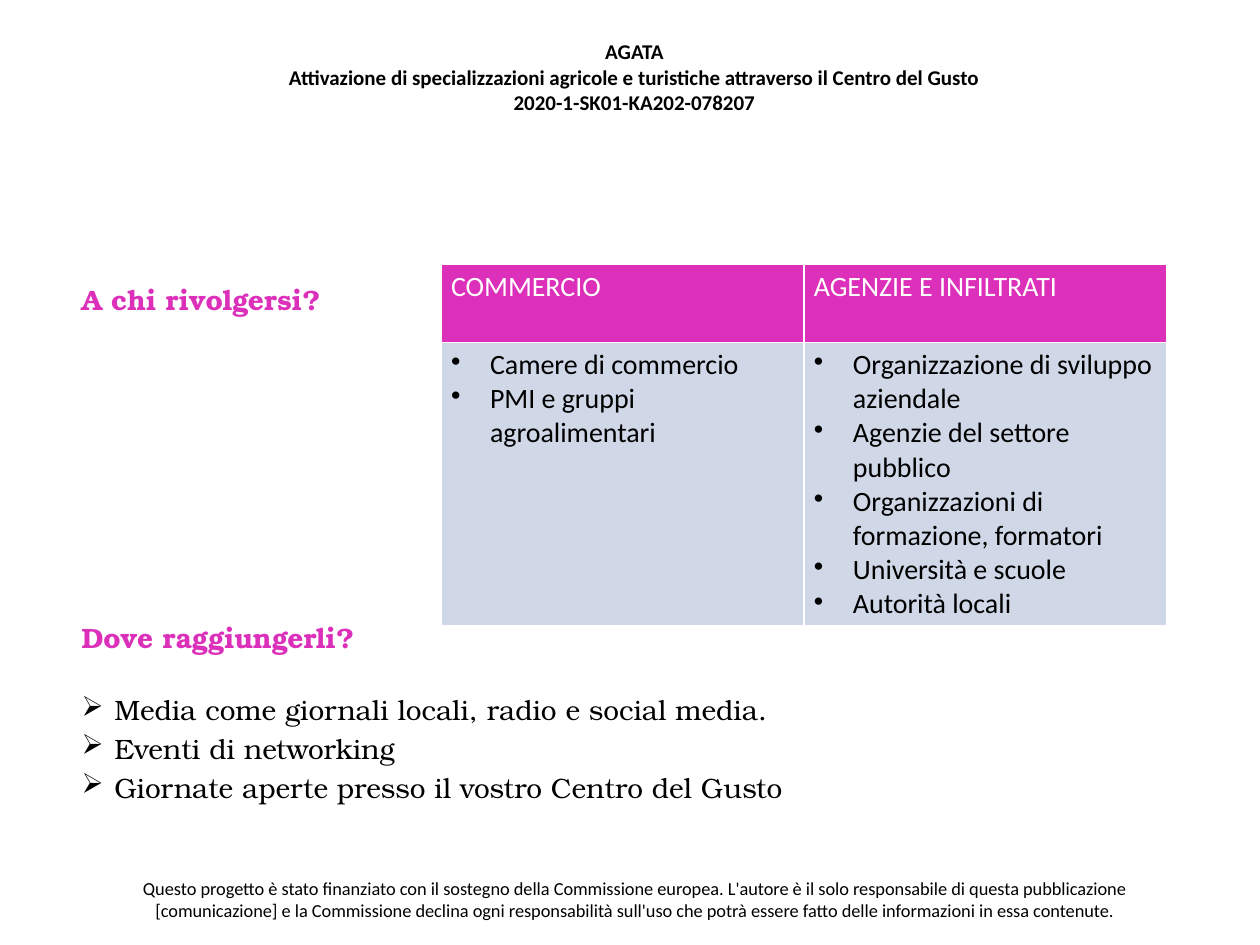
from dataclasses import dataclass

from lxml import etree
from pptx import Presentation
from pptx import util as u
from pptx.dml import color
from pptx.enum import text
from pptx.oxml import ns

WIDTH, HEIGHT = 10, 7.5


@dataclass(frozen=True)
class Theme:
    ink: str = "000000"
    accent: str = "DC30BB"
    paper: str = "FFFFFF"
    cell: str = "D0D8E8"
    sans: str = "Calibri"
    serif: str = "TeX Gyre Bonum"
    body: float = 16
    project: float = 12
    credit: float = 10.5


THEME = Theme()

PROJECT = [
    "AGATA",
    "Attivazione di specializzazioni agricole e turistiche attraverso il Centro del Gusto",
    "2020-1-SK01-KA202-078207",
]
CREDIT = (
    "Questo progetto è stato finanziato con il sostegno della Commissione europea. "
    "L'autore è il solo responsabile di questa pubblicazione [comunicazione] e la "
    "Commissione declina ogni responsabilità sull'uso che potrà essere fatto delle "
    "informazioni in essa contenute."
)
AUDIENCES = {
    "COMMERCIO": ["Camere di commercio", "PMI e gruppi agroalimentari"],
    "AGENZIE E INFILTRATI": [
        "Organizzazione di sviluppo aziendale",
        "Agenzie del settore pubblico",
        "Organizzazioni di formazione, formatori",
        "Università e scuole",
        "Autorità locali",
    ],
}
CHANNELS = [
    "Media come giornali locali, radio e social media.",
    "Eventi di networking",
    "Giornate aperte presso il vostro Centro del Gusto",
]


def add_frame(slide, left, top, width, height):
    frame = slide.shapes.add_textbox(
        *(u.Inches(length) for length in (left, top, width, height))
    ).text_frame
    frame.word_wrap = True
    return frame


def next_paragraph(frame):
    first = frame.paragraphs[0]
    return frame.add_paragraph() if first.runs else first


def add_line(frame, words, size, face, ink, bold=False, align=None, bullet=None, indent=0):
    line = next_paragraph(frame)
    if bullet:
        props = line._p.get_or_add_pPr()
        props.set("marL", str(u.Inches(indent)))
        props.set("indent", str(-u.Inches(indent)))
        etree.SubElement(props, ns.qn("a:buChar")).set("char", bullet)
    line.alignment = align
    run = line.add_run()
    run.text = words
    run.font.size = u.Pt(size)
    run.font.name = face
    run.font.bold = bold
    run.font.color.rgb = color.RGBColor.from_string(ink)
    return line


def add_heading(frame, words):
    add_line(frame, words, THEME.body, THEME.serif, THEME.accent, bold=True)


def style_cell(cell, fill):
    cell.fill.solid()
    cell.fill.fore_color.rgb = color.RGBColor.from_string(fill)
    cell.margin_left = cell.margin_right = u.Inches(0.08)
    cell.margin_top = cell.margin_bottom = u.Inches(0.04)
    props = cell._tc.get_or_add_tcPr()
    for place, side in enumerate(("lnL", "lnR", "lnT", "lnB")):
        border = etree.Element(ns.qn(f"a:{side}"), w=str(u.Pt(1)))
        solid = etree.SubElement(border, ns.qn("a:solidFill"))
        etree.SubElement(solid, ns.qn("a:srgbClr")).set("val", THEME.paper)
        props.insert(place, border)


def add_audiences(slide, left, top, column_width, row_heights):
    table = slide.shapes.add_table(
        len(row_heights), len(AUDIENCES), u.Inches(left), u.Inches(top),
        u.Inches(column_width * len(AUDIENCES)), u.Inches(sum(row_heights)),
    ).table
    for row, height in zip(table.rows, row_heights):
        row.height = u.Inches(height)
    for column, (audience, members) in enumerate(AUDIENCES.items()):
        table.columns[column].width = u.Inches(column_width)
        head, detail = table.cell(0, column), table.cell(1, column)
        style_cell(head, THEME.accent)
        style_cell(detail, THEME.cell)
        add_line(head.text_frame, audience, THEME.body, THEME.sans, THEME.paper)
        for member in members:
            add_line(detail.text_frame, member, THEME.body, THEME.sans, THEME.ink,
                     bullet="•", indent=0.31)


def add_channels(frame):
    for place, channel in enumerate(CHANNELS):
        line = add_line(frame, channel, THEME.body, THEME.serif, THEME.ink,
                        bullet="➢", indent=0.26)
        line.line_spacing = 1.15
        if place == 0:
            line.space_before = u.Pt(19)


def main():
    deck = Presentation()
    deck.slide_width, deck.slide_height = u.Inches(WIDTH), u.Inches(HEIGHT)
    slide = deck.slides.add_slide(deck.slide_layouts[6])
    margin = 0.055 * WIDTH
    center = text.PP_ALIGN.CENTER

    project = add_frame(slide, 2.08, 0.26, 5.91, 0.71)
    for words in PROJECT:
        add_line(project, words, THEME.project, THEME.sans, THEME.ink, bold=True, align=center)

    credit = add_frame(slide, 0.54, 6.91, 0.9 * WIDTH, 0.47)
    add_line(credit, CREDIT, THEME.credit, THEME.sans, THEME.ink, align=center)

    add_heading(add_frame(slide, margin, 2.19, 2.8, 0.37), "A chi rivolgersi?")
    add_audiences(slide, 0.35 * WIDTH, 0.28 * HEIGHT, 2.88, (0.62, 2.25))

    reach = add_frame(slide, margin, 4.88, WIDTH - 2 * margin, 1.6)
    add_heading(reach, "Dove raggiungerli?")
    add_channels(reach)

    deck.save("out.pptx")


if __name__ == "__main__":
    main()
